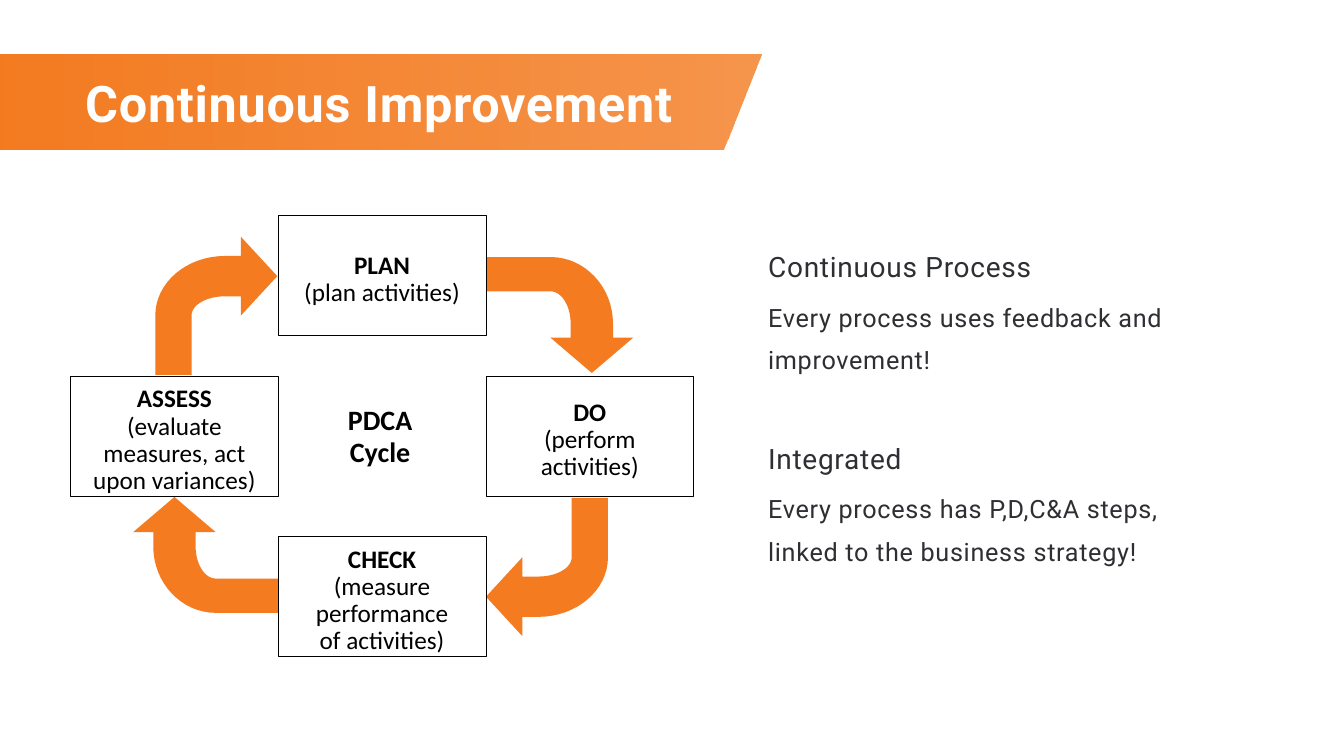
"""Build the Continuous Improvement slide with its PDCA cycle."""
from lxml import etree
from pptx import Presentation, util as u
from pptx.dml.color import RGBColor
from pptx.enum import shapes, text
from pptx.oxml.ns import qn

ORANGE = "F47B20"
BOX_W, BOX_H = 2.06, 1.19
STEPS = [
    (2.76, 2.14, "PLAN", "(plan activities)"),
    (4.82, 3.73, "DO", "(perform\vactivities)"),
    (2.76, 5.32, "CHECK", "(measure\vperformance\vof activities)"),
    (0.7, 3.73, "ASSESS", "(evaluate\vmeasures, act\vupon variances)"),
]
ACROSS = dict(head=0.36, half=0.39, shaft=0.2, bend=0.52, back=1.21, knee=0.39, leg=0.36, end=0.98)
UPDOWN = dict(head=0.35, half=0.41, shaft=0.21, bend=0.49, back=1.15, knee=0.41, leg=0.34, end=1.04)
ARROWS = [
    (2.75, 2.74, 1, 0, ACROSS),
    (5.87, 3.7, 0, 1, UPDOWN),
    (4.82, 5.92, -1, 0, ACROSS),
    (1.73, 4.93, 0, -1, UPDOWN),
]
NOTES = [
    ("Continuous Process", "Every process uses feedback and\vimprovement!"),
    ("Integrated", "Every process has P,D,C&A steps,\vlinked to the business strategy!"),
]


def rgb(value):
    """Return the colour for a hex string."""
    return RGBColor.from_string(value)


def set_all(target, values):
    """Set each attribute named in values."""
    for name, value in values.items():
        setattr(target, name, value)


def setup_frame(tf, top=0, side=0):
    """Prepare a wrapping text frame with fixed margins."""
    set_all(tf, dict(word_wrap=True, auto_size=text.MSO_AUTO_SIZE.NONE,
                     margin_left=u.Inches(side), margin_right=u.Inches(side),
                     margin_top=u.Inches(top), margin_bottom=0))


def add_text(tf, content, font, color, spc=0, first=False, **layout):
    """Write one paragraph with its font, colour and layout."""
    p = tf.paragraphs[0] if first else tf.add_paragraph()
    p.text = content
    set_all(p, layout)
    for r in p.runs:
        set_all(r.font, font)
        r.font.color.rgb = rgb(color)
        if spc:
            r.font._element.set("spc", str(spc))


def add_outline(s, points):
    """Draw a closed outline through points given in inches."""
    pts = [(u.Inches(x), u.Inches(y)) for x, y in points]
    fb = s.shapes.build_freeform(*pts[0])
    fb.add_line_segments(pts[1:], close=True)
    sp = fb.convert_to_shape()
    sp.shadow.inherit = False
    sp.line.fill.background()
    return sp


def curve(a, b, c, d, steps=16):
    """Return points along a cubic curve."""
    ts = [i / steps for i in range(steps + 1)]
    return [tuple((1 - t) ** 3 * a[k] + 3 * (1 - t) ** 2 * t * b[k]
                  + 3 * (1 - t) * t ** 2 * c[k] + t ** 3 * d[k] for k in (0, 1))
            for t in ts]


def quarter(start, end):
    """Return a rounded corner leaving along the shaft and ending along the leg."""
    (x0, y0), (x1, y1) = start, end
    k = 0.55
    return curve(start, (x0 + k * (x1 - x0), y0), (x1, y1 + k * (y0 - y1)), end)


def add_bent_arrow(s, x, y, dx, dy, size):
    """Draw a bent arrow with its tip at x, y and its head along dx, dy."""
    head, half, shaft, bend, back, knee, leg, end = size.values()
    inner = back - leg
    outline = [(0, 0), (head, -half), (head, -shaft),
               *quarter((bend, -shaft), (back, knee)),
               (back, end), (inner, end),
               *reversed(quarter((bend, shaft), (inner, knee))),
               (head, shaft), (head, half)]
    sp = add_outline(s, [(x - a * dx - b * dy, y - a * dy + b * dx) for a, b in outline])
    sp.fill.solid()
    sp.fill.fore_color.rgb = rgb(ORANGE)


def add_step(s, x, y, name, detail):
    """Draw one step box with a bold name and its detail."""
    sp = s.shapes.add_shape(shapes.MSO_SHAPE.RECTANGLE, *map(u.Inches, (x, y, BOX_W, BOX_H)))
    sp.shadow.inherit = False
    sp.fill.solid()
    sp.fill.fore_color.rgb = rgb("FFFFFF")
    sp.line.color.rgb = rgb("000000")
    sp.line.width = u.Pt(0.38)
    tf = sp.text_frame
    setup_frame(tf, top=0.08)
    tf.vertical_anchor = text.MSO_ANCHOR.MIDDLE
    layout = dict(alignment=text.PP_ALIGN.CENTER, line_spacing=u.Pt(19.2))
    font = dict(name="Calibri", size=u.Pt(18))
    add_text(tf, name, font | dict(bold=True), "000000", first=True, **layout)
    add_text(tf, detail, font, "000000", space_before=u.Pt(0.5), **layout)


def add_banner_title(s, content):
    """Draw the slanted banner and set the title on it."""
    banner = add_outline(s, [(-0.03, 0.54), (7.55, 0.54), (7.17, 1.48), (-0.03, 1.48)])
    banner.fill.gradient()
    banner.fill.gradient_angle = 0
    for stop in banner.fill.gradient_stops:
        stop.color.rgb = rgb(ORANGE)
    last = list(banner.element.iter(qn("a:srgbClr")))[-1]
    etree.SubElement(last, qn("a:alpha")).set("val", "80000")
    title = s.shapes.title
    title.element.addprevious(banner.element)
    set_all(title, dict(left=u.Inches(-0.03), top=u.Inches(0.54),
                        width=u.Inches(7.58), height=u.Inches(0.95)))
    tf = title.text_frame
    setup_frame(tf)
    tf.vertical_anchor = text.MSO_ANCHOR.MIDDLE
    add_text(tf, content, dict(name="Roboto", size=u.Pt(36), bold=True), "FFFFFF",
             spc=50, first=True, alignment=text.PP_ALIGN.CENTER)


def add_cycle_label(s):
    """Name the cycle at its centre."""
    tf = s.shapes.add_textbox(*map(u.Inches, (3.27, 4.01, 1, 0.66))).text_frame
    setup_frame(tf)
    add_text(tf, "PDCA\vCycle", dict(name="Calibri", size=u.Pt(20), bold=True), "000000",
             first=True, alignment=text.PP_ALIGN.CENTER, line_spacing=u.Pt(23))


def add_notes(s):
    """Write the headings and statements beside the cycle."""
    tf = s.shapes.add_textbox(*map(u.Inches, (7.52, 2.43, 5.37, 3.26))).text_frame
    setup_frame(tf, top=0.05, side=0.1)
    for i, (heading, body) in enumerate(NOTES):
        add_text(tf, heading, dict(name="Roboto", size=u.Pt(20)), "2E2F33", spc=50,
                 first=i == 0, space_before=u.Pt(48 if i else 0))
        add_text(tf, body, dict(name="Roboto", size=u.Pt(18)), "2E2F33", spc=50,
                 line_spacing=1.4, space_before=u.Pt(4.5))


def main():
    """Build and save the slide."""
    prs = Presentation()
    prs.slide_width, prs.slide_height = u.Inches(13.33), u.Inches(7.5)
    s = prs.slides.add_slide(prs.slide_layouts[5])
    add_banner_title(s, "Continuous Improvement")
    for arrow in ARROWS:
        add_bent_arrow(s, *arrow)
    for step in STEPS:
        add_step(s, *step)
    add_cycle_label(s)
    add_notes(s)
    prs.save("out.pptx")


if __name__ == "__main__":
    main()
